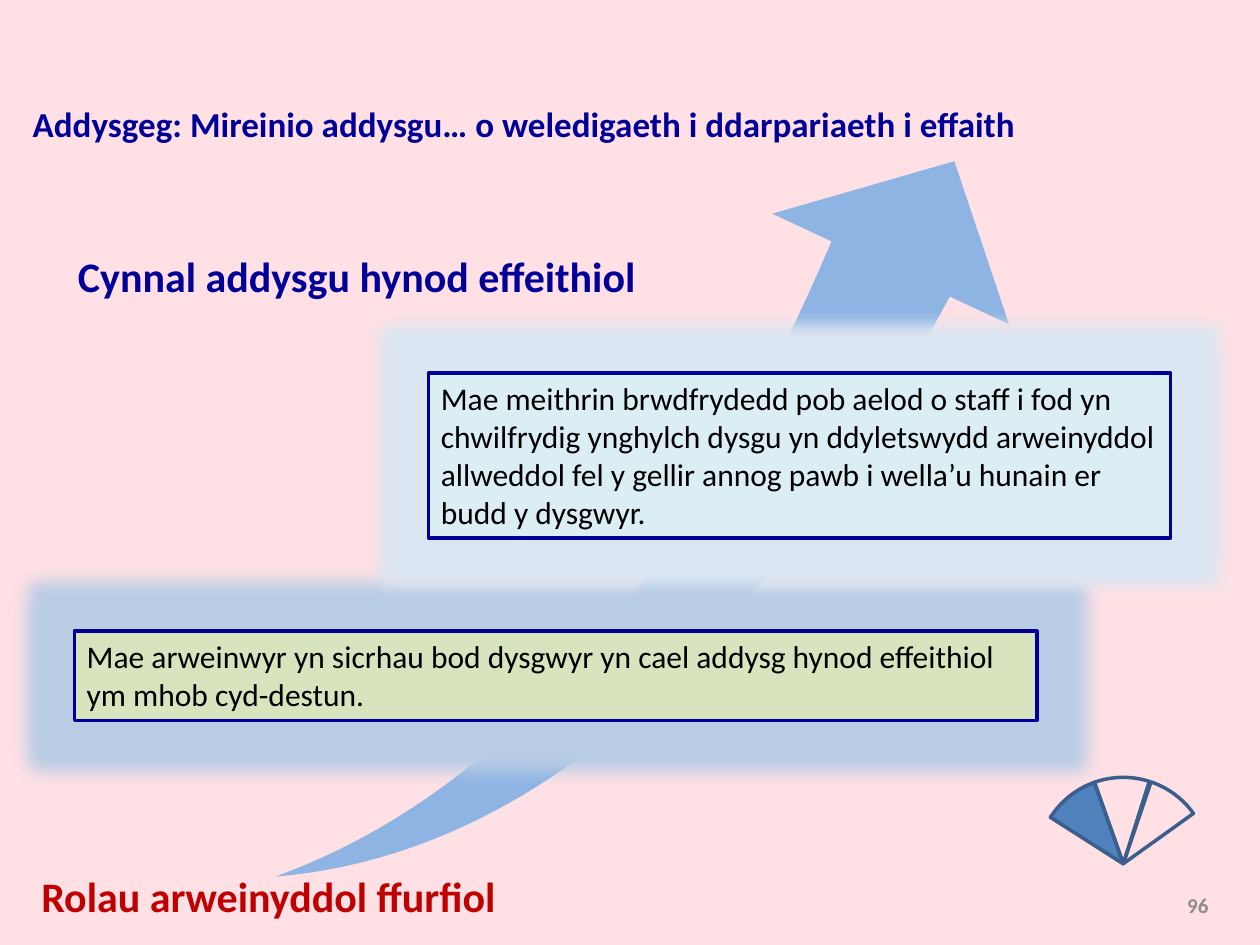
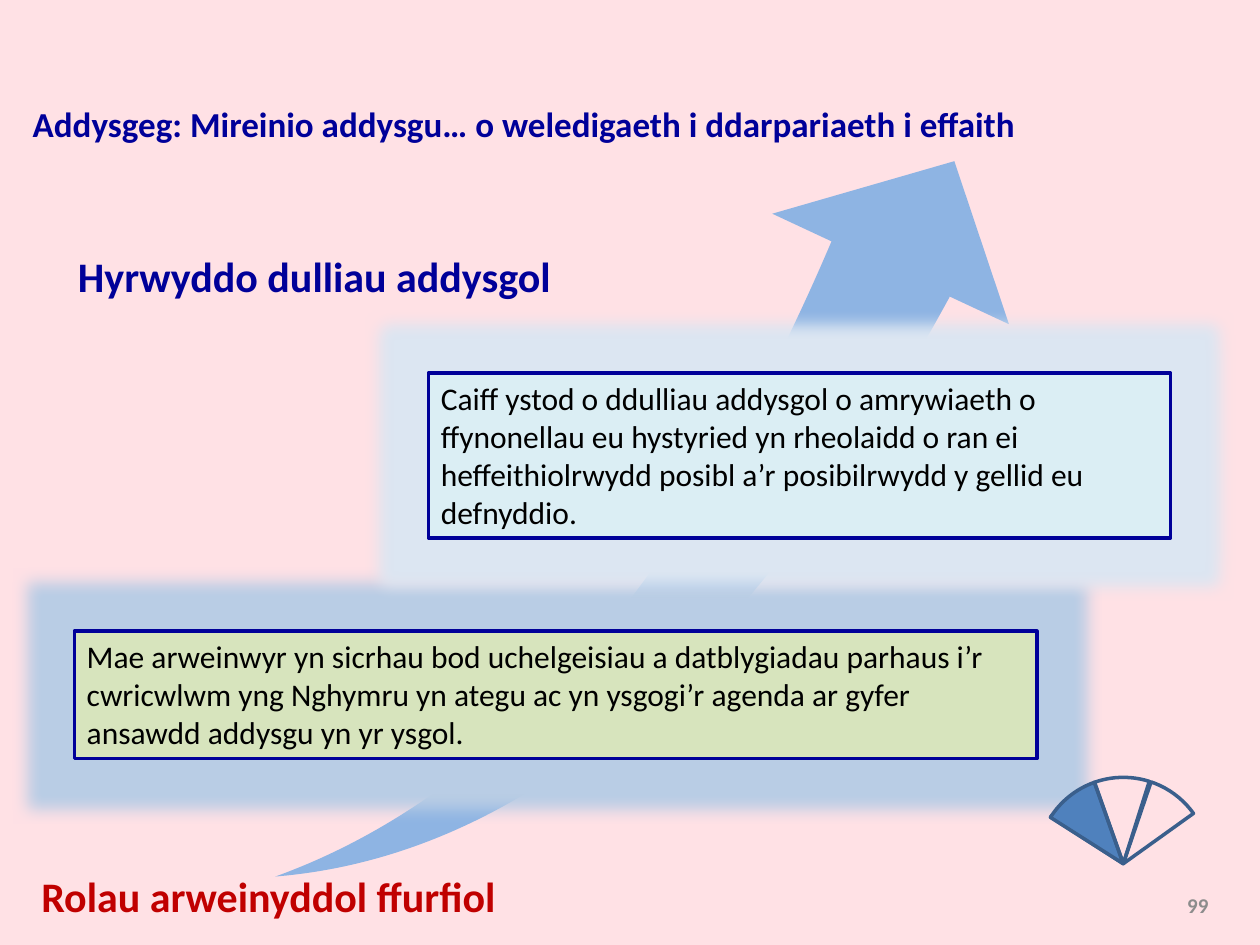
from lxml.etree import SubElement
from pptx import Presentation
from pptx.dml.color import RGBColor
from pptx.enum.shapes import MSO_SHAPE
from pptx.enum.text import MSO_ANCHOR, MSO_AUTO_SIZE, PP_ALIGN
from pptx.oxml.ns import qn
from pptx.util import Inches, Pt

HUES = {
    "page": "FFE1E5", "navy": "000099", "red": "C00000", "black": "000000",
    "grey": "8C8C8C", "arrow": "8EB4E3", "green": "D7E4BD", "aqua": "DBEEF4",
    "mist": "DCE6F2", "haze": "B9CDE5", "fan": "4F81BD", "edge": "3A5F8C",
}
FONT = "Calibri"
TITLE = "Addysgeg: Mireinio addysgu… o weledigaeth i ddarpariaeth i effaith"
ROLE = "Rolau arweinyddol ffurfiol"
# number, heading, upper box, lower box, rows of the lower box
PAGES = [
    ("96", "Cynnal addysgu hynod effeithiol",
     "Mae meithrin brwdfrydedd pob aelod o staff i fod yn chwilfrydig ynghylch "
     "dysgu yn ddyletswydd arweinyddol allweddol fel y gellir annog pawb i "
     "wella’u hunain er budd y dysgwyr.",
     "Mae arweinwyr yn sicrhau bod dysgwyr yn cael addysg hynod effeithiol "
     "ym mhob cyd-destun.", 7.1),
    ("99", "Hyrwyddo dulliau addysgol",
     "Caiff ystod o ddulliau addysgol o amrywiaeth o ffynonellau eu hystyried "
     "yn rheolaidd o ran ei heffeithiolrwydd posibl a’r posibilrwydd y gellid "
     "eu defnyddio.",
     "Mae arweinwyr yn sicrhau bod uchelgeisiau a datblygiadau parhaus i’r "
     "cwricwlwm yng Nghymru yn ategu ac yn ysgogi’r agenda ar gyfer ansawdd "
     "addysgu yn yr ysgol.", 10.1),
]
# start and end angle of each fan blade, and its fill
BLADES = [(161.56, 162.84, None), (161.36, 199.46, "fan"),
          (199.28, 236.43, None), (237.68, 273.28, None)]

deck = Presentation()
deck.slide_width, deck.slide_height = Inches(10), Inches(7.5)
COL, ROW = deck.slide_width / 100, deck.slide_height / 75
back = deck.slide_master.background.fill
back.solid()
back.fore_color.rgb = RGBColor.from_string(HUES["page"])


def draw(slide, kind, spot, fill=None, line=None):
    """Add a preset shape; spot is left, top, width, height in grid cells."""
    x, y, w, h = spot
    shape = slide.shapes.add_shape(
        kind, int(x * COL), int(y * ROW), int(w * COL), int(h * ROW))
    shape.shadow.inherit = False
    if fill:
        shape.fill.solid()
        shape.fill.fore_color.rgb = RGBColor.from_string(HUES[fill])
    else:
        shape.fill.background()
    if line:
        shape.line.color.rgb = RGBColor.from_string(HUES[line])
        shape.line.width = Pt(2)
    else:
        shape.line.fill.background()
    return shape


def write(shape, words, size, hue, bold=True, align=PP_ALIGN.LEFT,
          anchor=MSO_ANCHOR.TOP):
    frame = shape.text_frame
    frame.text = words
    frame.word_wrap = True
    frame.auto_size = MSO_AUTO_SIZE.NONE
    frame.vertical_anchor = anchor
    para = frame.paragraphs[0]
    para.alignment = align
    font = para.runs[0].font
    font.name, font.size, font.bold = FONT, Pt(size), bold
    font.color.rgb = RGBColor.from_string(HUES[hue])


for number, heading, upper, lower, rows in PAGES:
    slide = deck.slides.add_slide(deck.slide_layouts[5])
    title = slide.shapes.title
    title.left, title.top = int(1.6 * COL), int(7.6 * ROW)
    title.width, title.height = int(90.2 * COL), int(4.4 * ROW)
    write(title, TITLE, 20, "navy")

    arrow = draw(slide, MSO_SHAPE.SWOOSH_ARROW, (17.2, 21.9, 71, 41.2), "arrow")
    arrow.adjustments[0] = arrow.adjustments[1] = 0.25
    arrow.rotation = 288.6
    arrow.element.spPr.find(qn("a:xfrm")).set("flipV", "1")

    for words, spot, fill, halo in (
            (lower, (5.9, 50.1, 76.4, rows), "green", "haze"),
            (upper, (34, 29.6, 58.9, 13.1), "aqua", "mist")):
        box = draw(slide, MSO_SHAPE.RECTANGLE, spot, fill, "navy")
        write(box, words, 18, "black", bold=False)
        glow = SubElement(box.element.spPr.find(qn("a:effectLst")),
                          qn("a:glow"), rad=str(Inches(0.25)))
        SubElement(glow, qn("a:srgbClr"), val=HUES[halo])

    for words, spot, size, hue, align, anchor in (
            (heading, (5.2, 19.4, 66.1, 5), 24, "navy",
             PP_ALIGN.LEFT, MSO_ANCHOR.TOP),
            (number, (73.6, 69.8, 23.3, 4), 12, "grey",
             PP_ALIGN.RIGHT, MSO_ANCHOR.MIDDLE),
            (ROLE, (2.3, 68.6, 50.8, 5), 24, "red",
             PP_ALIGN.LEFT, MSO_ANCHOR.TOP)):
        x, y, w, h = spot
        label = slide.shapes.add_textbox(
            int(x * COL), int(y * ROW), int(w * COL), int(h * ROW))
        write(label, words, size, hue, align=align, anchor=anchor)

    for start, end, fill in BLADES:
        blade = draw(slide, MSO_SHAPE.PIE, (82.3, 61.7, 13.7, 13.7), fill, "edge")
        # one degree is 60000 units, and an adjustment of 1 is 100000 units
        blade.adjustments[0], blade.adjustments[1] = start * 0.6, end * 0.6
        blade.rotation = 51.1

deck.save("out.pptx")
